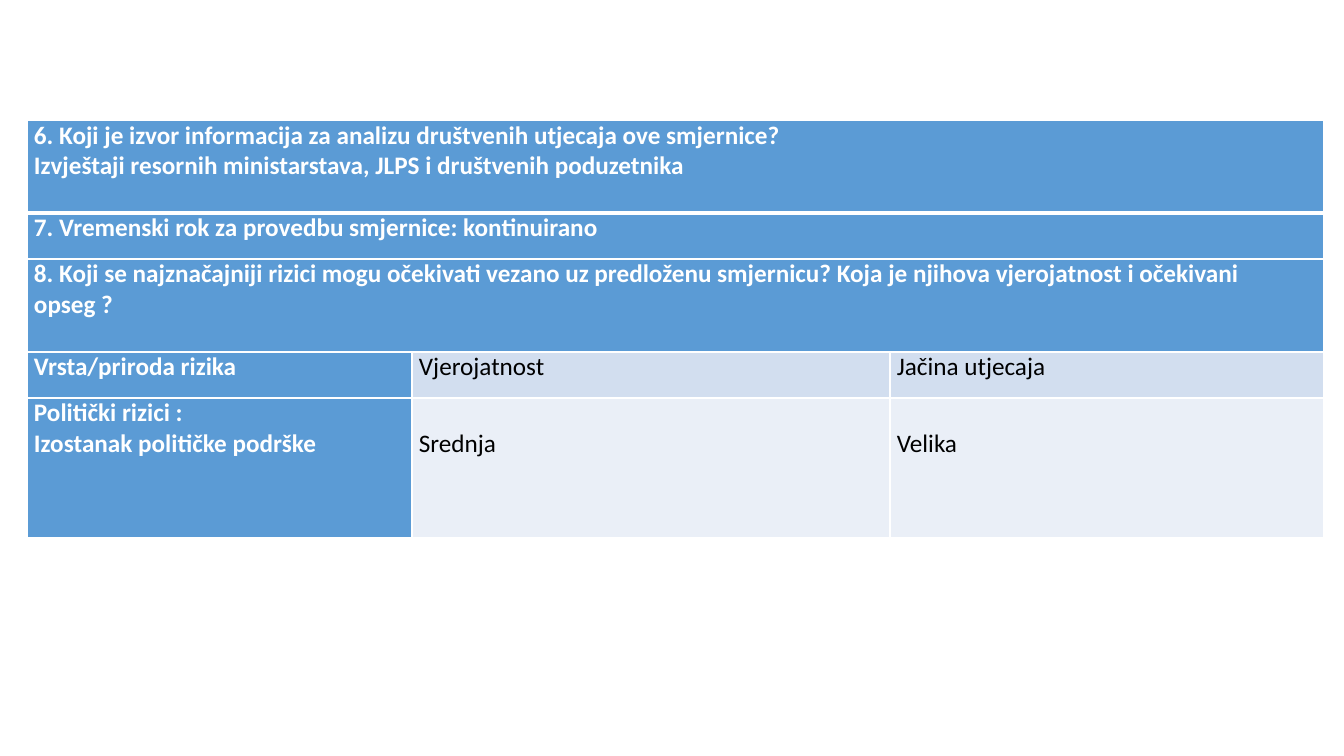
from dataclasses import dataclass

from lxml import etree
from pptx import Presentation, util as u
from pptx.dml.color import RGBColor
from pptx.oxml import ns


@dataclass(frozen=True)
class Theme:
    """Colours and type sizes of the slide."""
    font: str = "Calibri"
    size: int = 18
    heading: str = "5B9BD5"
    label_band: str = "D2DEEF"
    value_band: str = "EAEFF7"
    light: str = "FFFFFF"
    dark: str = "000000"
    rule: float = 1
    heavy_rule: float = 3


THEME = Theme()
SLIDE_SIZE = (1344, 756)
RISK_BOX = (27, 120, 1297, 419)
COLUMN_WIDTHS = (385, 478, 434)
ROW_HEIGHTS = (93, 46, 93, 46, 140)
SIDE_INSET = 7
LINE_HEIGHT = 31

QUESTIONS = (
    ("6. Koji je izvor informacija za analizu društvenih utjecaja ove smjernice?",
     "Izvještaji resornih ministarstava, JLPS i društvenih poduzetnika"),
    ("7. Vremenski rok za provedbu smjernice: kontinuirano",),
    ("8. Koji se najznačajniji rizici mogu očekivati vezano uz predloženu smjernicu? "
     "Koja je njihova vjerojatnost i očekivani opseg ?",),
)
RISKS = (
    (("Vrsta/priroda rizika",), ("Vjerojatnost",), ("Jačina utjecaja",)),
    (("Politički rizici :", "Izostanak političke podrške"), ("Srednja",), ("Velika",)),
)


def px(length):
    """Turn slide pixels into EMU."""
    return u.Emu(round(length * 914400 / 100.8))


def write(frame, lines, *, color, bold=False):
    """Write one paragraph per line in the given format."""
    frame.word_wrap = True
    for index, line in enumerate(lines):
        paragraph = frame.add_paragraph() if index else frame.paragraphs[0]
        run = paragraph.add_run()
        run.text = line
        run.font.name = THEME.font
        run.font.size = u.Pt(THEME.size)
        run.font.bold = bold
        run.font.color.rgb = RGBColor.from_string(color)


def rule_cell(cell, top, bottom):
    """Draw the four borders of a cell."""
    properties = cell._tc.get_or_add_tcPr()
    widths = {"L": THEME.rule, "R": THEME.rule, "T": top, "B": bottom}
    for index, (side, width) in enumerate(widths.items()):
        border = etree.Element(ns.qn(f"a:ln{side}"), w=str(u.Pt(width)))
        fill = etree.SubElement(border, ns.qn("a:solidFill"))
        etree.SubElement(fill, ns.qn("a:srgbClr"), val=THEME.light)
        properties.insert(index, border)


def fill_cell(cell, lines, *, fill, color, bold=False, top_inset=0):
    """Set the fill, insets and text of a cell."""
    cell.fill.solid()
    cell.fill.fore_color.rgb = RGBColor.from_string(fill)
    cell.margin_left = cell.margin_right = px(SIDE_INSET)
    cell.margin_top, cell.margin_bottom = px(top_inset), 0
    write(cell.text_frame, lines, color=color, bold=bold)


def add_risk_table(slide, box):
    """Place the questions and the risk assessment in the box."""
    row_count, column_count = len(ROW_HEIGHTS), len(COLUMN_WIDTHS)
    table = slide.shapes.add_table(row_count, column_count, *map(px, box)).table
    table.first_row = table.horz_banding = False
    for column, width in zip(table.columns, COLUMN_WIDTHS):
        column.width = px(width)
    for row, height in zip(table.rows, ROW_HEIGHTS):
        row.height = px(height)

    for row in range(row_count):
        top = THEME.heavy_rule if row == 1 else THEME.rule
        bottom = THEME.heavy_rule if row == 0 else THEME.rule
        for column in range(column_count):
            rule_cell(table.cell(row, column), top, bottom)

    heading = dict(fill=THEME.heading, color=THEME.light, bold=True)
    for row, question in enumerate(QUESTIONS):
        cell = table.cell(row, 0)
        cell.merge(table.cell(row, column_count - 1))
        fill_cell(cell, question, **heading)

    bands = ((THEME.label_band, 0), (THEME.value_band, LINE_HEIGHT))
    for row, (risk, (band, inset)) in enumerate(zip(RISKS, bands), len(QUESTIONS)):
        fill_cell(table.cell(row, 0), risk[0], **heading)
        for column, rating in enumerate(risk[1:], 1):
            fill_cell(table.cell(row, column), rating, fill=band,
                      color=THEME.dark, top_inset=inset)


def main():
    """Build and save the slide."""
    deck = Presentation()
    deck.slide_width, deck.slide_height = map(px, SLIDE_SIZE)
    slide = deck.slides.add_slide(deck.slide_layouts[6])
    add_risk_table(slide, RISK_BOX)
    deck.save("out.pptx")


if __name__ == "__main__":
    main()
